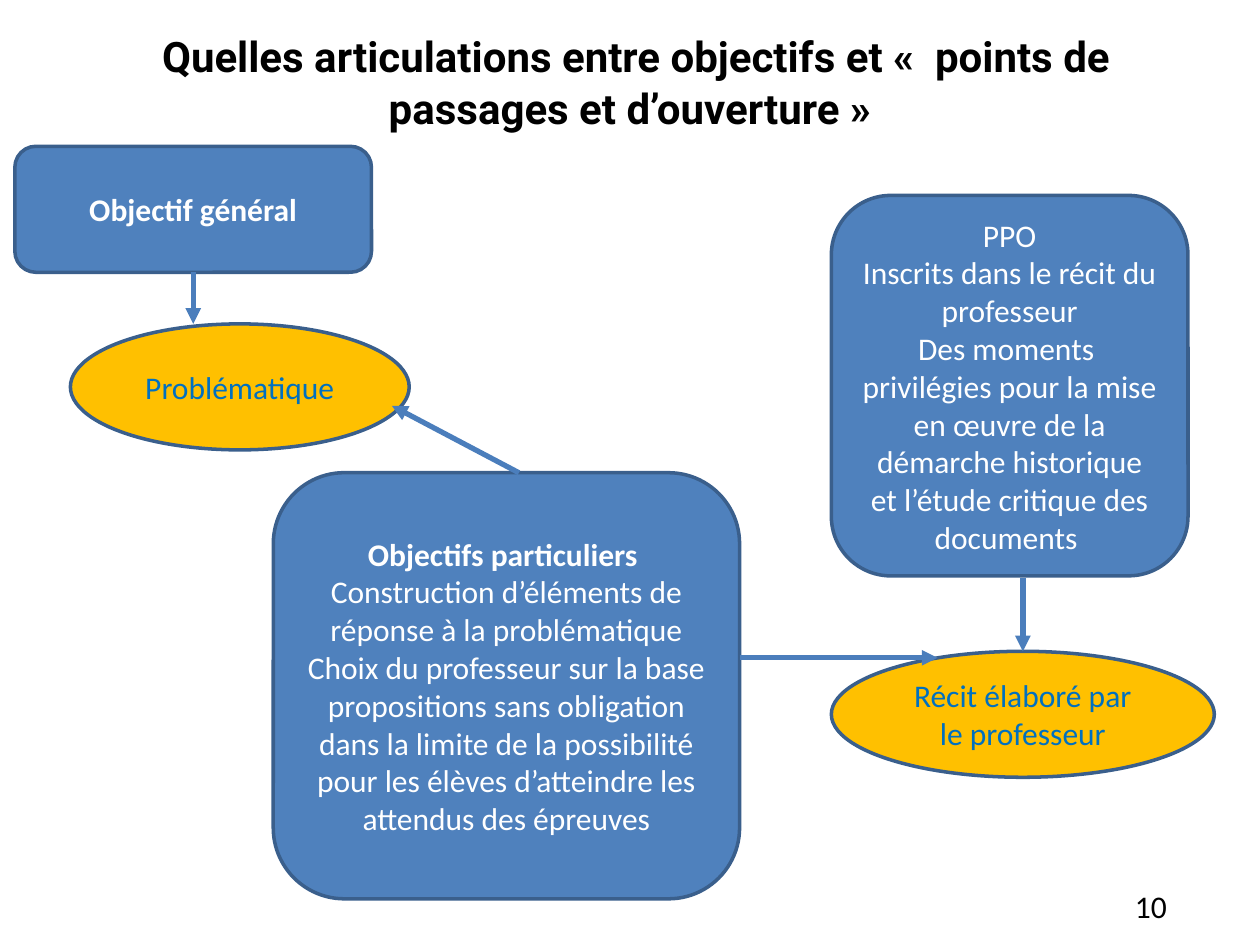
from collections import namedtuple

from lxml import etree
from pptx import Presentation
from pptx import util as u
from pptx.dml.color import RGBColor
from pptx.enum import shapes, text
from pptx.oxml import ns

Box = namedtuple("Box", "left top width height")
Style = namedtuple("Style", "shape fill font")

COLOURS = {
    "black": "000000",
    "white": "FFFFFF",
    "blue": "4F81BD",
    "outline": "3A5F8C",
    "arrow": "4B7EBC",
    "gold": "FFC000",
    "gold text": "0070C0",
}
GOAL = Style(shapes.MSO_SHAPE.ROUNDED_RECTANGLE, "blue", "white")
OUTCOME = Style(shapes.MSO_SHAPE.OVAL, "gold", "gold text")


def colour(name):
    return RGBColor.from_string(COLOURS[name])


def lengths(values):
    return [u.Cm(value) for value in values]


def set_font(font, size, shade, name="Calibri", bold=False):
    font.name = name
    font.size = u.Pt(size)
    font.bold = bold
    font.color.rgb = colour(shade)


def add_title(page, box):
    frame = page.shapes.add_textbox(*lengths(box)).text_frame
    frame.word_wrap = True
    frame.margin_top = u.Cm(0.19)
    para = frame.paragraphs[0]
    para.alignment = text.PP_ALIGN.CENTER
    set_font(para.font, 24, "black", "Roboto", True)
    lead = para.add_run()
    lead.text = " "
    lead.font.size = u.Pt(28)
    para.add_run().text = (
        "Quelles articulations entre objectifs et «  points de "
        "passages et d’ouverture »"
    )


def add_page_number(page, box, number):
    frame = page.shapes.add_textbox(*lengths(box)).text_frame
    frame.word_wrap = True
    para = frame.paragraphs[0]
    para.text = str(number)
    set_font(para.font, 18, "black")


def add_node(page, box, style, lines, heading=False):
    """Draw one step of the diagram; heading makes its first line bold."""
    node = page.shapes.add_shape(style.shape, *lengths(box))
    node.shadow.inherit = False
    node.fill.solid()
    node.fill.fore_color.rgb = colour(style.fill)
    node.line.color.rgb = colour("outline")
    node.line.width = u.Pt(2)
    frame = node.text_frame
    frame.word_wrap = True
    frame.vertical_anchor = text.MSO_ANCHOR.MIDDLE
    for index, line in enumerate(lines):
        para = frame.add_paragraph() if index else frame.paragraphs[0]
        para.text = line
        para.alignment = text.PP_ALIGN.CENTER
        set_font(para.font, 18, style.font, bold=heading and index == 0)


def add_arrow(page, start, end):
    arrow = page.shapes.add_connector(
        shapes.MSO_CONNECTOR.STRAIGHT, *lengths(start + end))
    arrow.line.color.rgb = colour("arrow")
    arrow.line.width = u.Pt(3)
    etree.SubElement(arrow.line._get_or_add_ln(), ns.qn("a:tailEnd"),
                     type="triangle")
    etree.SubElement(arrow._element.spPr, ns.qn("a:effectLst"))


def add_diagram(page, box):
    """Place the five steps and their arrows from the box's top left corner."""
    def place(left, top, width, height):
        return Box(box.left + left, box.top + top, width, height)

    general = place(0, 0, 7.19, 2.54)
    particular = place(5.21, 6.58, 9.4, 8.59)
    passages = place(16.46, 0.99, 7.19, 7.67)
    problem = place(1.12, 3.58, 6.83, 2.54)
    story = place(16.46, 10.18, 7.72, 2.54)

    add_node(page, general, GOAL, ["Objectif général"], heading=True)
    add_node(page, particular, GOAL, [
        "Objectifs particuliers ",
        "Construction d’éléments de réponse à la problématique",
        "Choix du professeur sur la base propositions sans obligation dans "
        "la limite de la possibilité pour les élèves d’atteindre les "
        "attendus des épreuves",
    ], heading=True)
    add_node(page, passages, GOAL, [
        "PPO",
        "Inscrits dans le récit du professeur",
        "Des moments  privilégies pour la mise en œuvre de la démarche "
        "historique et l’étude critique des documents ",
    ])
    add_node(page, problem, OUTCOME, ["Problématique"])
    add_node(page, story, OUTCOME, ["Récit élaboré par le professeur"])

    general_middle = general.left + general.width / 2
    story_middle = story.left + story.width / 2
    particular_right = particular.left + particular.width
    story_entry = story.top + 0.13
    add_arrow(page, (general_middle, general.top + general.height),
              (general_middle, problem.top))
    add_arrow(page, (particular.left + 4.95, particular.top),
              (problem.left + 6.48, problem.top + 1.65))
    add_arrow(page, (particular_right, story_entry),
              (story.left + 2.14, story_entry))
    add_arrow(page, (story_middle, passages.top + passages.height + 0.05),
              (story_middle, story.top))


def main():
    deck = Presentation()
    deck.slide_width, deck.slide_height = lengths((25.4, 19.05))
    page = deck.slides.add_slide(deck.slide_layouts[6])
    add_title(page, Box(1.75, 0.28, 21.9, 2.24))
    add_page_number(page, Box(22.63, 17.75, 1.24, 1.02), 10)
    add_diagram(page, Box(0.3, 2.95, 24.18, 15.17))
    deck.save("out.pptx")


if __name__ == "__main__":
    main()
